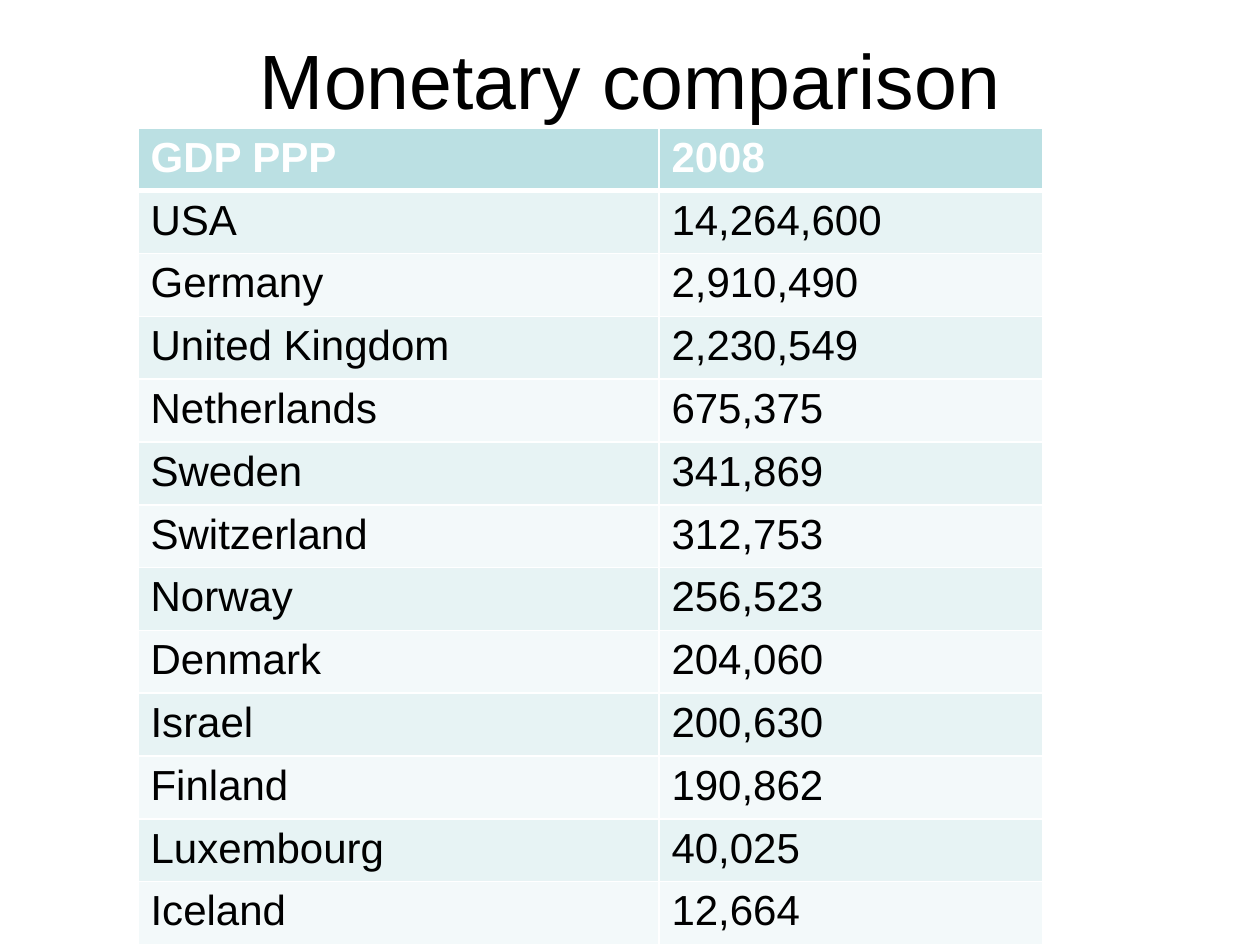
import pptx
import pptx.dml.color
import pptx.enum.text
import pptx.oxml
import pptx.oxml.ns
import pptx.util

PX = 914400 // 126
ROWS = [
    ("GDP PPP", "2008"),
    ("USA", "14,264,600"),
    ("Germany", "2,910,490"),
    ("United Kingdom", "2,230,549"),
    ("Netherlands", "675,375"),
    ("Sweden", "341,869"),
    ("Switzerland", "312,753"),
    ("Norway", "256,523"),
    ("Denmark", "204,060"),
    ("Israel", "200,630"),
    ("Finland", "190,862"),
    ("Luxembourg", "40,025"),
    ("Iceland", "12,664"),
]


def rgb(value):
    return pptx.dml.color.RGBColor.from_string(value)


def px(*values):
    return [pptx.util.Emu(v * PX) for v in values]


class Deck:
    """Holds the slide style and the current slide."""

    font = "Arial"
    ink, white = "000000", "FFFFFF"
    header, bands = "BBE0E3", ("E7F3F4", "F3F9FA")

    def __init__(self, prs):
        self.s = prs.slides.add_slide(prs.slide_layouts[5])

    def add_text(self, tf, text, size, color, bold=False):
        p = tf.paragraphs[0]
        r = p.add_run()
        r.text = text
        style = {"name": self.font, "size": pptx.util.Pt(size), "bold": bold}
        for name, value in style.items():
            setattr(r.font, name, value)
        r.font.color.rgb = rgb(color)
        return p

    def title(self, text, left, top, width, height):
        sp = self.s.shapes.title
        sp.left, sp.top, sp.width, sp.height = px(left, top, width, height)
        tf = sp.text_frame
        tf.vertical_anchor = pptx.enum.text.MSO_ANCHOR.MIDDLE
        p = self.add_text(tf, text, 44, self.ink)
        p.alignment = pptx.enum.text.PP_ALIGN.CENTER

    def borders(self, cell, widths):
        tc_pr = cell._tc.get_or_add_tcPr()
        for side, width in widths.items():
            tc_pr.append(pptx.oxml.parse_xml(
                f'<a:ln{side} {pptx.oxml.ns.nsdecls("a")} w="{pptx.util.Pt(width)}">'
                f'<a:solidFill><a:srgbClr val="{self.white}"/></a:solidFill></a:ln{side}>'))

    def table(self, rows, left, top, widths, height):
        box = px(left, top, sum(widths), height)
        table = self.s.shapes.add_table(len(rows), len(widths), *box).table
        for column, width in zip(table.columns, px(*widths)):
            column.width = width
        for i, row in enumerate(rows):
            head = i == 0
            fill = self.header if head else self.bands[(i - 1) % 2]
            sides = {"L": 1, "R": 1, "T": 3 if i == 1 else 1, "B": 3 if head else 1}
            for j, text in enumerate(row):
                cell = table.cell(i, j)
                self.borders(cell, sides)
                cell.fill.solid()
                cell.fill.fore_color.rgb = rgb(fill)
                self.add_text(cell.text_frame, text, 24, self.white if head else self.ink, head)


def main():
    prs = pptx.Presentation()
    prs.slide_width, prs.slide_height = pptx.util.Inches(10), pptx.util.Inches(7.5)
    deck = Deck(prs)
    deck.title("Monetary comparison", 95, 0, 1071, 158)
    deck.table(ROWS, 138, 128, (521, 384), 817)
    prs.save("out.pptx")


if __name__ == "__main__":
    main()
